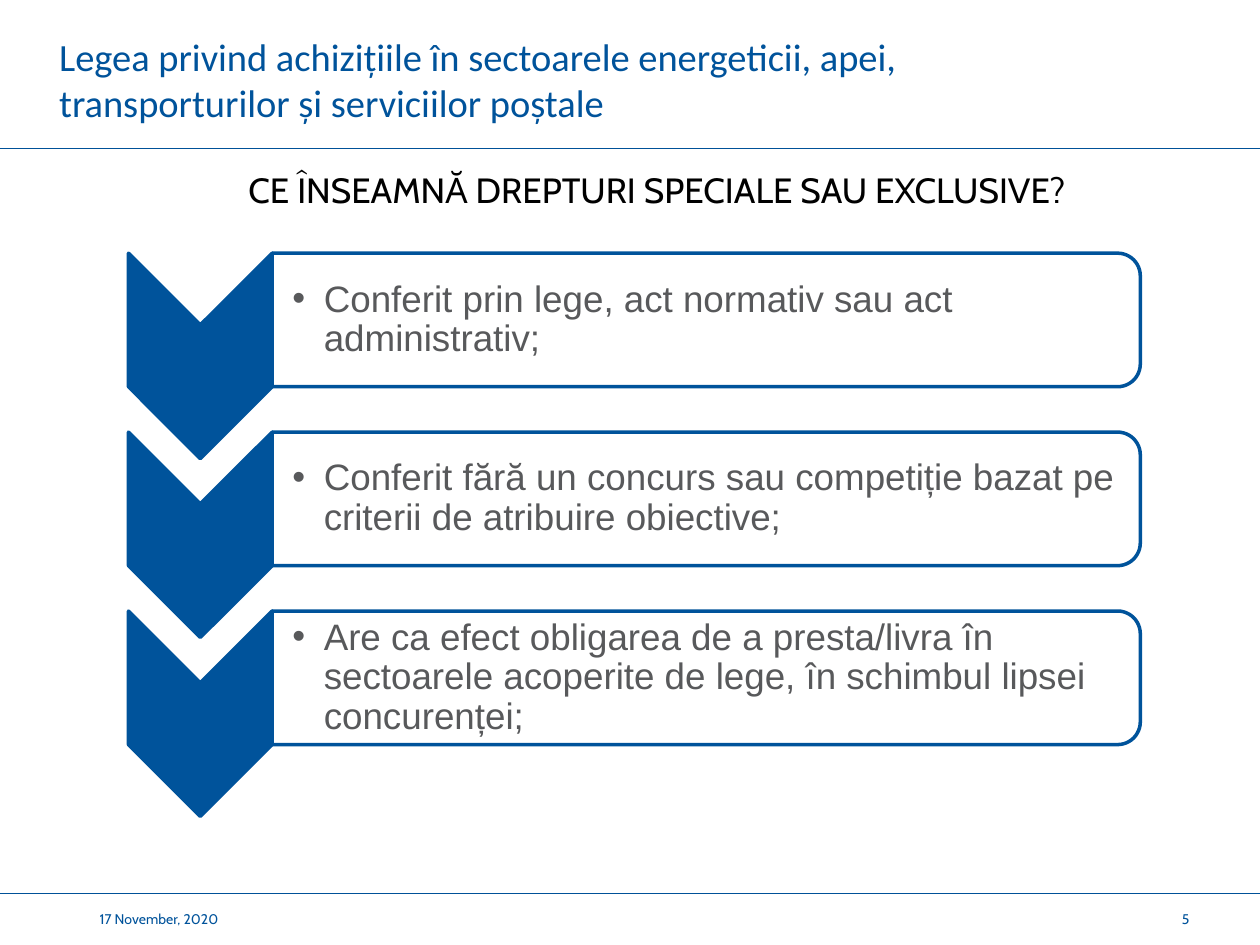
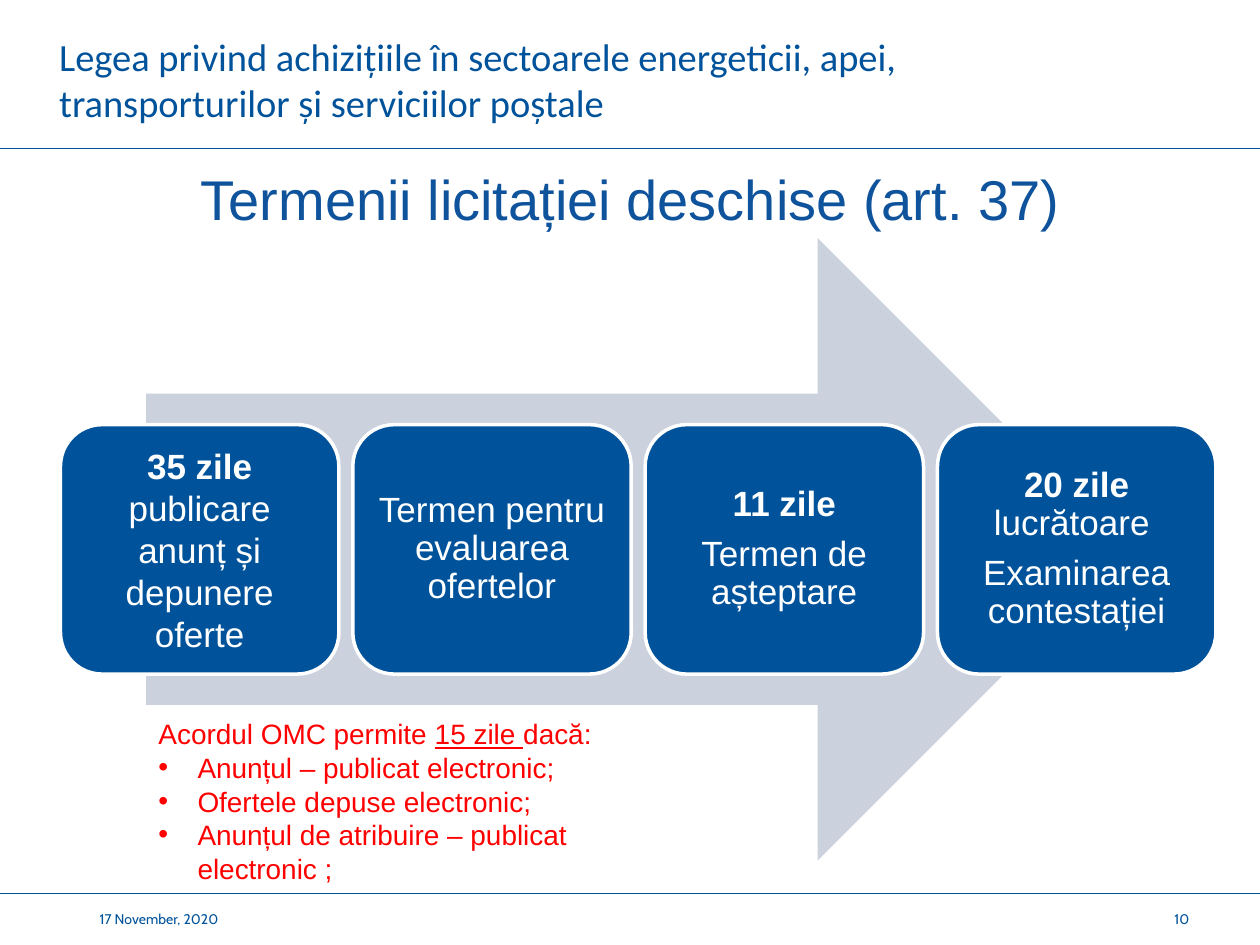
"""Build two slides on procurement law for the utilities sectors."""
from math import cos, pi, sin

from lxml import etree
from pptx import Presentation
from pptx.dml.color import RGBColor
from pptx.enum import shapes as sh, text as tx
from pptx.oxml import ns
from pptx.util import Inches, Pt

BLUE = RGBColor(0x00, 0x53, 0x9B)
RULE = RGBColor(0x00, 0x51, 0x98)
HEAD = RGBColor(0x0E, 0x53, 0x9B)
PALE = RGBColor(0xCC, 0xD1, 0xDE)
GREY = RGBColor(0x58, 0x59, 0x5B)
RED = RGBColor(0xFF, 0x00, 0x00)
BLACK = RGBColor(0x00, 0x00, 0x00)
WHITE = RGBColor(0xFF, 0xFF, 0xFF)
LEFT, MID, RIGHT = tx.PP_ALIGN.LEFT, tx.PP_ALIGN.CENTER, tx.PP_ALIGN.RIGHT
TITLE = ("Legea privind achizițiile în sectoarele energeticii, apei,\v"
         "transporturilor și serviciilor poștale")
DATE = "17 November, 2020"
RIGHTS = [
    "Conferit prin lege, act normativ sau act administrativ;",
    "Conferit fără un concurs sau competiție bazat pe criterii de atribuire obiective;",
    "Are ca efect obligarea de a presta/livra în sectoarele acoperite de lege, "
    "în schimbul lipsei concurenței;",
]
STEPS = [
    ([[("35 zile ", "b"), "publicare anunț și depunere oferte"]], 1.0),
    (["Termen pentru evaluarea ofertelor"], 0.9),
    ([[("11 zile", "b")], "Termen de așteptare"], 0.9),
    ([[("20 zile ", "b"), "lucrătoare "], "Examinarea contestației"], 0.9),
]
TERMS = [
    "Anunțul – publicat electronic;",
    "Ofertele depuse electronic;",
    "Anunțul de atribuire – publicat electronic ;",
]


class Deck:
    """Hold the shared style and the current slide."""

    def __init__(self):
        self.prs = Presentation()
        self.prs.slide_width, self.prs.slide_height = Inches(10), Inches(7.5)
        self.slide = None

    def start(self, page):
        self.slide = self.prs.slides.add_slide(self.prs.slide_layouts[5])
        for y in (1.18, 7.09):
            self.rule(y)
        self.text((0.79, 7.09, 2.05, 0.41), [DATE], 8, BLUE, "Cabin")
        self.text((9.05, 7.09, 0.39, 0.41), [str(page)], 8, BLUE, "Cabin", RIGHT)
        title = self.slide.shapes.title
        title.left, title.top, title.width, title.height = map(
            Inches, (0.47, 0.04, 6.92, 1.18))
        self.label(title, [TITLE], 22, BLUE, "Calibri")

    def rule(self, y):
        line = self.slide.shapes.add_connector(
            sh.MSO_CONNECTOR.STRAIGHT, 0, Inches(y), Inches(10), Inches(y))
        line.line.color.rgb, line.line.width = RULE, Pt(0.25)
        etree.SubElement(line._element.spPr, ns.qn("a:effectLst"))

    def text(self, box, paras, *style, **more):
        item = self.slide.shapes.add_textbox(*map(Inches, box))
        self.label(item, paras, *style, **more)

    def label(self, item, paras, size, color, font="Arial", align=LEFT,
              inset=(0, 0, 0, 0), anchor=tx.MSO_ANCHOR.MIDDLE, gap=0, lead=1.0,
              dent=0, first=0):
        frame = item.text_frame
        frame.word_wrap, frame.auto_size = True, tx.MSO_AUTO_SIZE.NONE
        frame.vertical_anchor = anchor
        (frame.margin_left, frame.margin_top,
         frame.margin_right, frame.margin_bottom) = map(Inches, inset)
        for i, runs in enumerate(paras):
            para = frame.paragraphs[0] if i == 0 else frame.add_paragraph()
            if isinstance(runs, str):
                para.text = runs
            else:
                self.runs(para, runs)
            if dent and i >= first:
                self.bullet(para, dent)
            para.alignment, para.line_spacing = align, lead
            para.space_before = Pt(gap if i else 0)
            para.font.name, para.font.size = font, Pt(size)
            para.font.color.rgb = color

    def runs(self, para, runs):
        for part in runs:
            words, mark = (part, "") if isinstance(part, str) else part
            run = para.add_run()
            run.text = words
            if mark == "b":
                run.font.bold = True
            elif mark == "u":
                run.font.underline = True

    def bullet(self, para, dent):
        props = para._p.get_or_add_pPr()
        props.set("marL", str(Inches(dent)))
        props.set("indent", str(-Inches(dent)))
        etree.SubElement(props, ns.qn("a:buFont"), typeface="Arial")
        etree.SubElement(props, ns.qn("a:buChar"), char="•")

    def paint(self, item, fill, line=None):
        item.shadow.inherit = False
        item.fill.solid()
        item.fill.fore_color.rgb = fill
        if line is None:
            item.line.fill.background()
        else:
            item.line.color.rgb, item.line.width = line, Pt(2)
        return item

    def shape(self, kind, box, *paint):
        item = self.slide.shapes.add_shape(kind, *map(Inches, box))
        return self.paint(item, *paint)

    def poly(self, dots, *paint):
        dots = [(Inches(x), Inches(y)) for x, y in dots]
        form = self.slide.shapes.build_freeform(*dots[0])
        form.add_line_segments(dots[1:])
        return self.paint(form.convert_to_shape(), *paint)

    def chevron(self, x, y, wide, tall):
        half = wide / 2
        self.poly([(x, y), (x + half, y + half), (x + wide, y),
                   (x + wide, y + tall), (x + half, y + tall + half),
                   (x, y + tall)], BLUE, BLUE)

    def panel(self, x, y, wide, tall, words):
        rad, turns = 0.18, [i * pi / 24 for i in range(13)]
        cx, up, low = x + wide - rad, y + rad, y + tall - rad
        top = [(cx + rad * sin(t), up - rad * cos(t)) for t in turns]
        base = [(cx + rad * cos(t), low + rad * sin(t)) for t in turns]
        item = self.poly([(x, y), *top, *base, (x, y + tall)], WHITE, BLUE)
        self.label(item, [words], 21, GREY, lead=0.9, dent=0.25,
                   inset=(0.16, 0.07, 0.07, 0.07))

    def card(self, box, paras, lead):
        item = self.shape(sh.MSO_SHAPE.ROUNDED_RECTANGLE, box, BLUE, WHITE)
        item.adjustments[0] = 0.1667
        self.label(item, paras, 20, WHITE, align=MID, inset=(0.08,) * 4,
                   gap=7, lead=lead)


def rights(deck):
    deck.start(5)
    deck.text((0.88, 1.22, 8.67, 0.61),
              ["CE ÎNSEAMNĂ DREPTURI SPECIALE SAU EXCLUSIVE?"], 20, BLACK,
              "Cabin", MID, inset=(0.1, 0.05, 0.1, 0.05), lead=0.9)
    for i, words in enumerate(RIGHTS):
        y = 2.01 + 1.42 * i
        deck.chevron(1.02, y, 1.14, 1.06)
        deck.panel(2.16, y, 6.89, 1.06, words)


def terms(deck):
    deck.start(10)
    deck.text((0.79, 1.31, 8.43, 0.64),
              ["Termenii licitației deschise (art. 37)"], 32, HEAD,
              align=MID, anchor=tx.MSO_ANCHOR.TOP)
    deck.shape(sh.MSO_SHAPE.RIGHT_ARROW, (1.16, 1.89, 7.8, 4.94), PALE)
    for i, (paras, lead) in enumerate(STEPS):
        deck.card((0.48 + 2.32 * i, 3.37, 2.21, 1.98), paras, lead)
    deck.text((1.16, 5.64, 3.84, 1.45),
              [["Acordul OMC permite ", ("15 zile ", "u"), "dacă:"], *TERMS],
              16, RED, inset=(0.1, 0.05, 0.1, 0.05),
              anchor=tx.MSO_ANCHOR.TOP, dent=0.31, first=1)


def main():
    deck = Deck()
    rights(deck)
    terms(deck)
    deck.prs.save("out.pptx")


if __name__ == "__main__":
    main()
